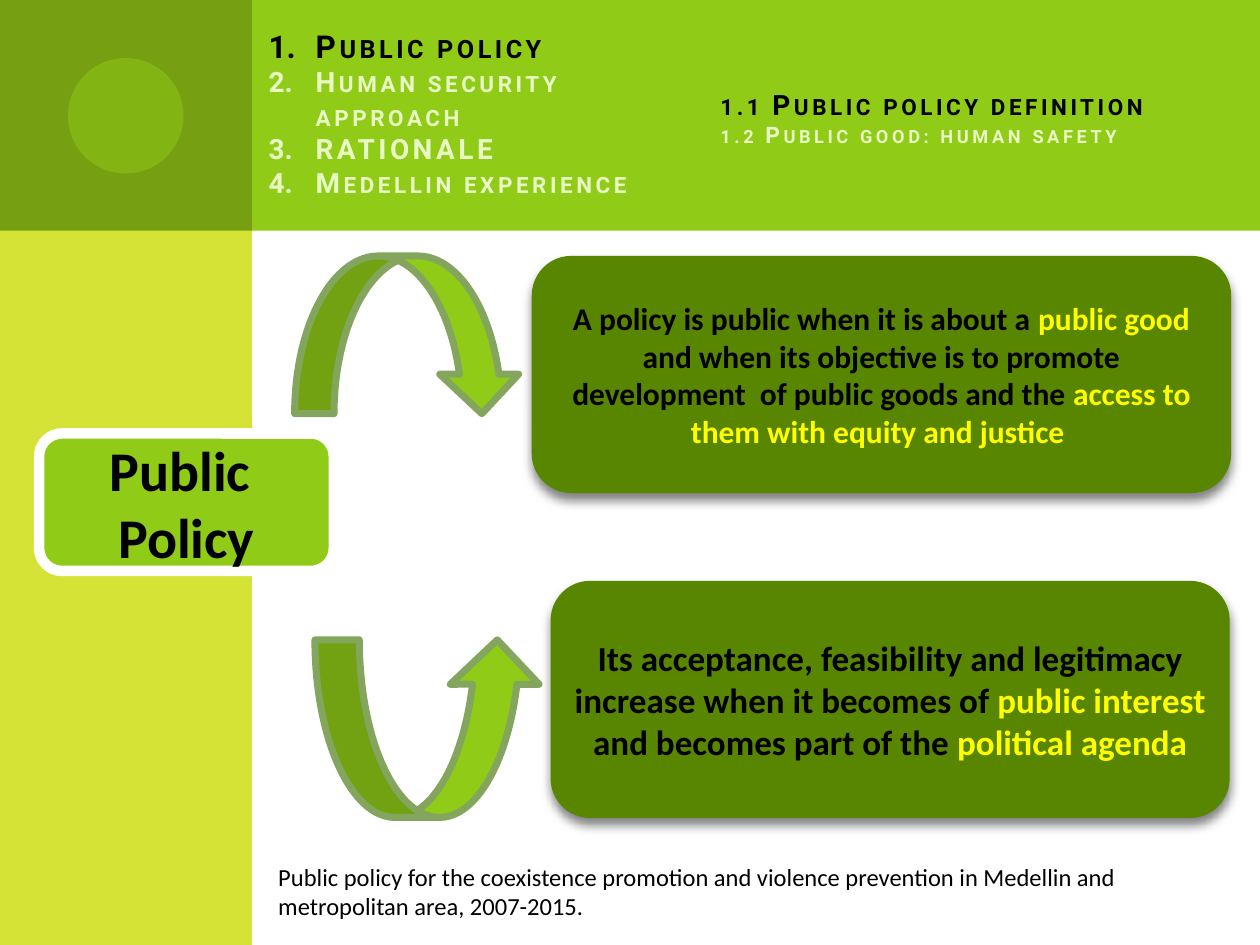
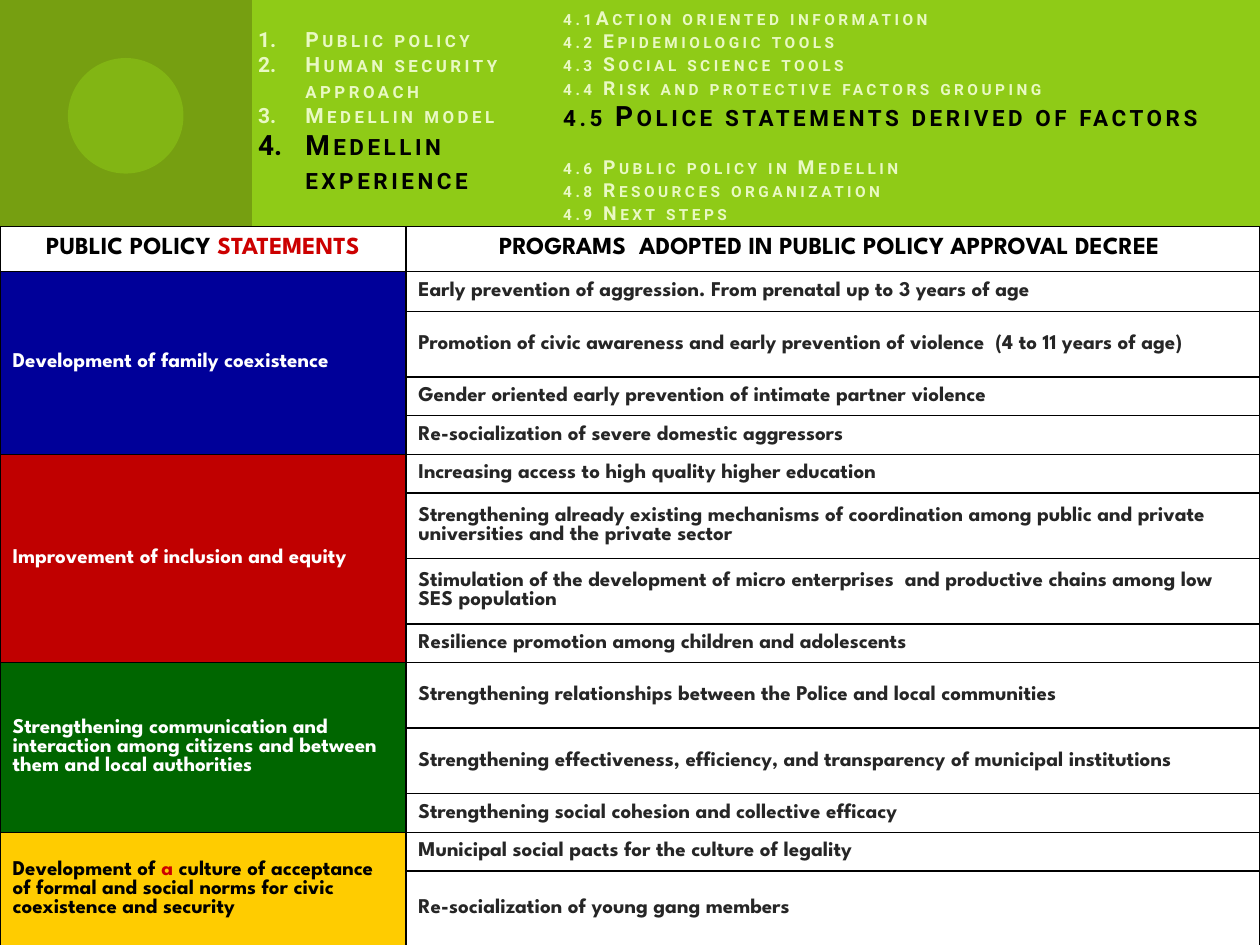
from dataclasses import dataclass

from lxml import etree
from pptx import Presentation
from pptx.dml.color import RGBColor
from pptx.enum.shapes import MSO_SHAPE as Preset
from pptx.enum.text import MSO_ANCHOR as Anchor, MSO_AUTO_SIZE as AutoSize, PP_ALIGN as Align
from pptx.oxml import parse_xml
from pptx.oxml.ns import nsdecls, qn
from pptx.util import Cm, Pt


@dataclass(frozen=True)
class Theme:
    # Colours
    green: str = "8FCB17"
    dark_green: str = "769F11"
    lime: str = "D4E336"
    box_green: str = "598600"
    arrow_edge: str = "84A55E"
    pale: str = "E9F9C3"
    yellow: str = "FFFF00"
    red: str = "CC0000"
    black: str = "000000"
    white: str = "FFFFFF"
    grey: str = "262626"
    # Fonts and sizes
    heading_font: str = "Roboto"
    body_font: str = "Calibri"
    table_font: str = "League Spartan"
    active_size: int = 16
    topic_size: int = 32
    note_size: int = 14
    table_head_size: int = 14
    table_size: int = 12


THEME = Theme()


def write(paragraph, text, font, size, color, accent=None, bold=True, align=Align.LEFT):
    """Write text into a paragraph; every second part between bars takes the accent colour."""
    paragraph.alignment = align
    paragraph.font.name = font
    paragraph.font.size = Pt(size)
    paragraph.font.bold = bold
    paragraph.font.color.rgb = RGBColor.from_string(color)
    for position, part in enumerate(text.split("|")):
        if part:
            run = paragraph.add_run()
            run.text = part
            if accent:
                run.font.color.rgb = RGBColor.from_string(accent if position % 2 else color)


def add_block(slide, preset, place, fill, edge=None, edge_width=0):
    """Add a filled preset shape without shadow; place is left, top, width, height in cm."""
    block = slide.shapes.add_shape(preset, *map(Cm, place))
    block.shadow.inherit = False
    block.fill.solid()
    block.fill.fore_color.rgb = RGBColor.from_string(fill)
    if edge:
        block.line.color.rgb = RGBColor.from_string(edge)
        block.line.width = Pt(edge_width)
    else:
        block.line.fill.background()
    return block


deck = Presentation()
deck.slide_width, deck.slide_height = Cm(25.4), Cm(19.05)
layout = deck.slide_layouts[1]
policy_slide, programs_slide = [deck.slides.add_slide(layout) for _ in range(2)]

# Shared bands, moved to the layout behind its placeholders
bands = [
    add_block(policy_slide, Preset.RECTANGLE, (1.27, 0, 24.13, 4.65), THEME.green),
    add_block(policy_slide, Preset.RECTANGLE, (0, 0, 5.08, 19.05), THEME.lime),
    add_block(policy_slide, Preset.RECTANGLE, (0, 0, 5.08, 4.65), THEME.dark_green),
    add_block(policy_slide, Preset.OVAL, (1.37, 1.17, 2.33, 2.33), THEME.green),
]
dot_color = bands[-1].element.spPr.find(qn("a:solidFill"))[0]
etree.SubElement(dot_color, qn("a:alpha"), val="50000")
for order, band in enumerate(bands):
    layout.shapes.element.insert(2 + order, band.element)

# Headers: numbered outline on the left, section title on the right
# Each line is (text, size, active)
headers = [
    (policy_slide, (5.16, 0.41, 8.94, 3.76), [
        ("Public policy", 18, True),
        ("Human security approach", 16, False),
        ("RATIONALE", 16, False),
        ("Medellin experience", 16, False),
    ], (14.27, 0.79, 11.13, 3.18), Anchor.MIDDLE, [
        ("1.1 Public policy definition", THEME.active_size, True),
        ("1.2 Public good: human safety", 13, False),
    ]),
    (programs_slide, (4.95, 0.41, 6.76, 3.68), [
        ("Public policy", 12, False),
        ("Human security approach", 12, False),
        ("Medellin model", 12, False),
        ("Medellin experience", THEME.active_size, True),
    ], (11.1, 0.13, 14.3, 4.75), Anchor.TOP, [
        ("4.1Action oriented information", 11, False),
        ("4.2 Epidemiologic tools", 11, False),
        ("4.3 Social science tools", 11, False),
        ("4.4 Risk and protective factors grouping", 11, False),
        ("4.5 Police statements derived of factors", THEME.active_size, True),
        ("4.6 Public policy in Medellin", 11, False),
        ("4.8 Resources organization", 11, False),
        ("4.9 Next steps", 11, False),
    ]),
]
for slide, outline_place, outline, title_place, title_anchor, title_lines in headers:
    title, outline_list = slide.shapes.title, slide.placeholders[1]
    for holder, place, anchor, lines in (
        (title, title_place, title_anchor, title_lines),
        (outline_list, outline_place, Anchor.TOP, outline),
    ):
        holder.left, holder.top, holder.width, holder.height = map(Cm, place)
        frame = holder.text_frame
        frame.word_wrap = True
        frame.auto_size = AutoSize.NONE
        frame.vertical_anchor = anchor
        if holder is title:
            frame.margin_top = frame.margin_bottom = 0
        after_active = False
        for number, (text, size, active) in enumerate(lines):
            line = frame.add_paragraph() if number else frame.paragraphs[0]
            line.space_before = Pt(13 if after_active and len(lines) > 4 else 0)
            after_active = active
            if holder is outline_list:
                properties = line._p.get_or_add_pPr()
                properties.set("marL", str(Cm(0.95)))
                properties.set("indent", str(-Cm(0.95)))
                etree.SubElement(properties, qn("a:buFont"), typeface="+mj-lt")
                etree.SubElement(properties, qn("a:buAutoNum"), type="arabicPeriod")
            write(line, text, THEME.heading_font, size, THEME.black if active else THEME.pale)
            for letters in (line._p.pPr.find(qn("a:defRPr")), line.runs[0]._r.get_or_add_rPr()):
                letters.set("cap", "small")
                letters.set("spc", "200")

# Policy slide: statements in shadowed boxes
statements = [
    ((11.1, 11.71, 13.69, 4.78), 20,
     "Its acceptance, feasibility and legitimacy increase when it becomes of "
     "|public interest |and becomes part of the |political agenda"),
    ((10.72, 5.16, 14.1, 4.78), 18,
     "A policy is public when it is about a |public good |and when its objective is to promote "
     "development  of public goods and the |access to them with equity and justice "),
]
for place, size, text in statements:
    statement = add_block(policy_slide, Preset.ROUNDED_RECTANGLE, place, THEME.box_green)
    effects = statement.element.spPr.find(qn("a:effectLst"))
    effects.append(parse_xml(
        f'<a:outerShdw {nsdecls("a")} blurRad="{Pt(6)}" dist="{Pt(4)}" dir="5400000" rotWithShape="0">'
        f'<a:srgbClr val="{THEME.black}"><a:alpha val="50000"/></a:srgbClr></a:outerShdw>'))
    statement.text_frame.vertical_anchor = Anchor.MIDDLE
    write(statement.text_frame.paragraphs[0], text, THEME.body_font, size,
          THEME.black, THEME.yellow, align=Align.CENTER)

# Policy slide: topic and the arrows leading from it
topic = add_block(policy_slide, Preset.ROUNDED_RECTANGLE, (0.79, 8.74, 5.94, 2.77),
                  THEME.green, THEME.white, 6)
topic.text_frame.vertical_anchor = Anchor.MIDDLE
for line, word in ((topic.text_frame.paragraphs[0], "Public "),
                   (topic.text_frame.add_paragraph(), "Policy")):
    write(line, word, THEME.body_font, THEME.topic_size, THEME.black, THEME.black,
          align=Align.CENTER)
for preset, place in ((Preset.CURVED_UP_ARROW, (6.35, 12.9, 4.57, 3.58)),
                      (Preset.CURVED_DOWN_ARROW, (5.94, 5.16, 4.57, 3.18))):
    add_block(policy_slide, preset, place, THEME.green, THEME.arrow_edge, 4)

# Policy slide: source note
note = policy_slide.shapes.add_textbox(Cm(5.36), Cm(17.25), Cm(19.25), Cm(1.45)).text_frame
note.word_wrap = True
write(note.paragraphs[0],
      "Public policy for the coexistence promotion and violence prevention in Medellin "
      "and metropolitan area, 2007-2015.",
      THEME.body_font, THEME.note_size, THEME.black, bold=False)

# Programs slide: table of statements and their programs with row heights in cm
LOW, HIGH = 0.78, 1.32
groups = [
    ("Development of family coexistence", "000099", THEME.white, [
        ("Early prevention of aggression. From prenatal up to 3 years of age", 0.81),
        ("Promotion of civic awareness and early prevention of violence  (4 to 11 years of age)", HIGH),
        ("Gender oriented early prevention of intimate partner violence", LOW),
        ("Re-socialization of severe domestic aggressors", LOW),
    ]),
    ("Improvement of inclusion and equity", "C00000", THEME.white, [
        ("Increasing access to high quality higher education", LOW),
        ("Strengthening already existing mechanisms of coordination among public and private "
         "universities and the private sector", HIGH),
        ("Stimulation of the development of micro enterprises  and productive chains among low "
         "SES population", HIGH),
        ("Resilience promotion among children and adolescents", LOW),
    ]),
    ("Strengthening communication and interaction among citizens and between them and local "
     "authorities", "006600", THEME.white, [
        ("Strengthening relationships between the Police and local communities", HIGH),
        ("Strengthening effectiveness, efficiency, and transparency of municipal institutions", HIGH),
        ("Strengthening social cohesion and collective efficacy", LOW),
    ]),
    ("Development of |a| culture of acceptance of formal and social norms for civic coexistence "
     "and security", "FFCC00", THEME.black, [
        ("Municipal social pacts for the culture of legality", LOW),
        ("Re-socialization of young gang members", 1.52),
    ]),
]
row_count = 1 + sum(len(programs) for *_, programs in groups)
programs_table = programs_slide.shapes.add_table(
    row_count, 2, 0, Cm(4.57), Cm(25.4), Cm(14.48)).table
programs_table.first_row = programs_table.horz_banding = False
programs_table.columns[0].width, programs_table.columns[1].width = Cm(8.18), Cm(17.22)

# Heading row
programs_table.rows[0].height = Cm(0.9)
for column, heading in enumerate(("PUBLIC POLICY |STATEMENTS",
                                  "PROGRAMS  ADOPTED IN PUBLIC POLICY APPROVAL DECREE ")):
    write(programs_table.cell(0, column).text_frame.paragraphs[0], heading, THEME.table_font,
          THEME.table_head_size, THEME.black, THEME.red, align=Align.CENTER)

# Statement groups, one merged cell beside its programs
fills = {}
row = 1
for statement, fill, color, programs in groups:
    group_cell = programs_table.cell(row, 0)
    group_cell.merge(programs_table.cell(row + len(programs) - 1, 0))
    write(group_cell.text_frame.paragraphs[0], statement, THEME.table_font,
          THEME.table_size, color, THEME.red)
    for program, height in programs:
        programs_table.rows[row].height = Cm(height)
        write(programs_table.cell(row, 1).text_frame.paragraphs[0], program,
              THEME.table_font, THEME.table_size, THEME.grey)
        fills[row, 0] = fill
        row += 1

# Cell borders, fills and anchors
for row in range(row_count):
    for column in range(2):
        cell = programs_table.cell(row, column)
        cell.vertical_anchor = Anchor.MIDDLE
        for side in ("lnL", "lnR", "lnT", "lnB"):
            cell._tc.get_or_add_tcPr().append(parse_xml(
                f'<a:{side} {nsdecls("a")} w="{Pt(1)}"><a:solidFill>'
                f'<a:srgbClr val="{THEME.black}"/></a:solidFill></a:{side}>'))
        cell.fill.solid()
        cell.fill.fore_color.rgb = RGBColor.from_string(fills.get((row, column), THEME.white))

deck.save("out.pptx")
